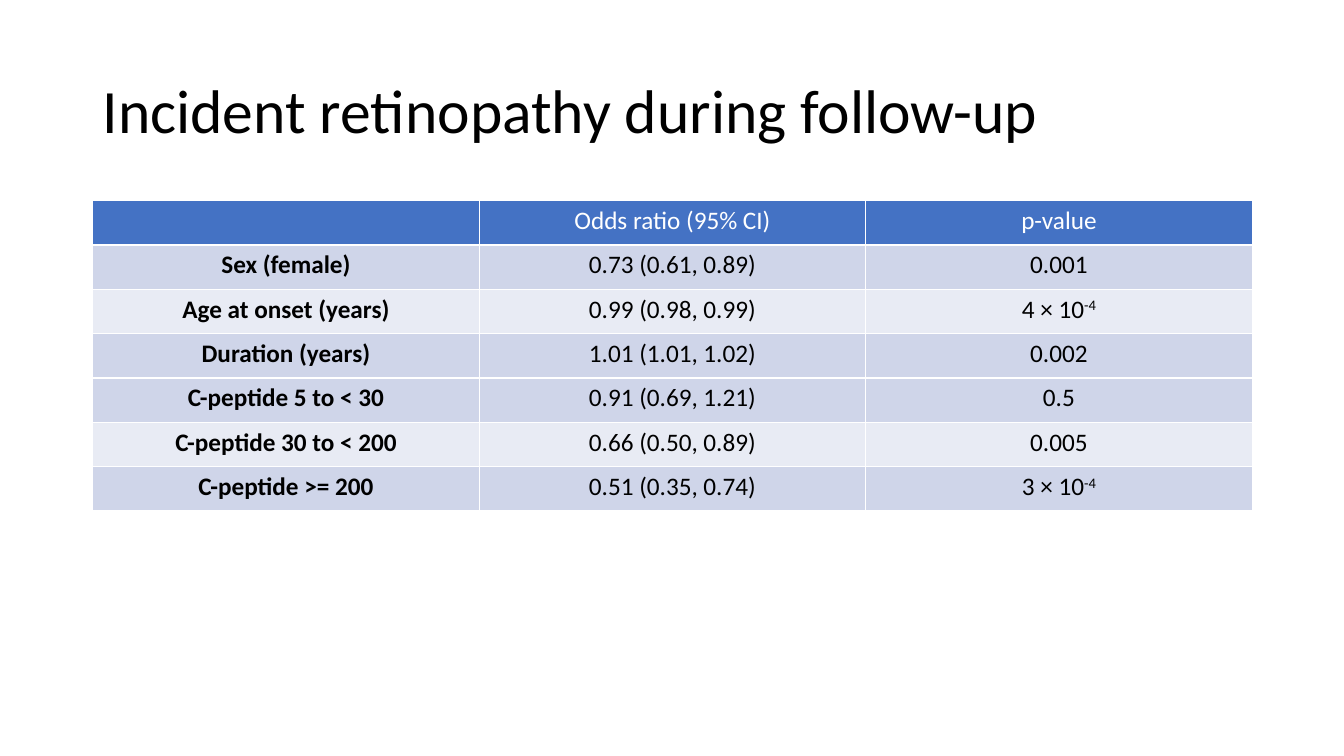
"""Build a slide tabulating odds ratios for incident retinopathy."""
from dataclasses import dataclass

from lxml.etree import SubElement
from pptx import Presentation
from pptx.dml.color import RGBColor
from pptx.enum.text import MSO_ANCHOR, PP_ALIGN
from pptx.oxml.ns import qn
from pptx.util import Inches, Pt

TITLE = "Incident retinopathy during follow-up"
HEADINGS = ("", "Odds ratio (95% CI)", "p-value")
PREDICTORS = [
    ("Sex (female)", "0.73 (0.61, 0.89)", "0.001"),
    ("Age at onset (years)", "0.99 (0.98, 0.99)", "4 × 10^-4"),
    ("Duration (years)", "1.01 (1.01, 1.02)", "0.002"),
    ("C-peptide 5 to < 30", "0.91 (0.69, 1.21)", "0.5"),
    ("C-peptide 30 to < 200", "0.66 (0.50, 0.89)", "0.005"),
    ("C-peptide >= 200", "0.51 (0.35, 0.74)", "3 × 10^-4"),
]
LEFT, WIDTH = 0.92, 11.5
TITLE_TOP, TITLE_HEIGHT = 0.4, 1.45
TABLE_TOP, ROW_HEIGHT = 1.99, 0.44


@dataclass(frozen=True)
class Theme:
    font: str = "Calibri"
    title_size: int = 44
    table_size: int = 18
    border_width: float = 0.96
    ink: str = "000000"
    white: str = "FFFFFF"
    header: str = "4472C4"
    bands: tuple = ("CFD5E9", "E8EBF4", "CFD5E9")


THEME = Theme()


def style(paragraph, size, color, bold=False):
    font = paragraph.font
    font.name, font.size, font.bold = THEME.font, Pt(size), bold
    font.color.rgb = RGBColor.from_string(color)


def add_borders(cell):
    properties = cell._tc.get_or_add_tcPr()
    for side in ("a:lnL", "a:lnR", "a:lnT", "a:lnB"):
        line = SubElement(properties, qn(side), w=str(Pt(THEME.border_width)))
        SubElement(SubElement(line, qn("a:solidFill")), qn("a:srgbClr"), val=THEME.white)


def fill_cell(cell, entry, background, color, bold):
    add_borders(cell)
    cell.fill.solid()
    cell.fill.fore_color.rgb = RGBColor.from_string(background)
    paragraph = cell.text_frame.paragraphs[0]
    paragraph.alignment = PP_ALIGN.CENTER
    style(paragraph, THEME.table_size, color, bold)
    base, _, exponent = entry.partition("^")
    if base:
        paragraph.add_run().text = base
    if exponent:
        superscript = paragraph.add_run()
        superscript.text = exponent
        superscript.font._element.set("baseline", "30000")


def add_title(slide):
    frame = slide.shapes.add_textbox(
        Inches(LEFT), Inches(TITLE_TOP), Inches(WIDTH), Inches(TITLE_HEIGHT)
    ).text_frame
    frame.word_wrap = True
    frame.vertical_anchor = MSO_ANCHOR.MIDDLE
    paragraph = frame.paragraphs[0]
    paragraph.text = TITLE
    paragraph.line_spacing = 0.9
    style(paragraph, THEME.title_size, THEME.ink)


def add_odds_table(slide):
    entries = [HEADINGS, *PREDICTORS]
    table = slide.shapes.add_table(
        len(entries), len(HEADINGS), Inches(LEFT), Inches(TABLE_TOP),
        Inches(WIDTH), Inches(ROW_HEIGHT * len(entries)),
    ).table
    for row, predictor in enumerate(entries):
        table.rows[row].height = Inches(ROW_HEIGHT)
        is_header = row == 0
        background = THEME.header if is_header else THEME.bands[(row - 1) % len(THEME.bands)]
        color = THEME.white if is_header else THEME.ink
        for column, entry in enumerate(predictor):
            bold = column == 0 and not is_header
            fill_cell(table.cell(row, column), entry, background, color, bold)


def main():
    deck = Presentation()
    deck.slide_width, deck.slide_height = Inches(13.33), Inches(7.5)
    slide = deck.slides.add_slide(deck.slide_layouts[6])
    add_title(slide)
    add_odds_table(slide)
    deck.save("out.pptx")


if __name__ == "__main__":
    main()
